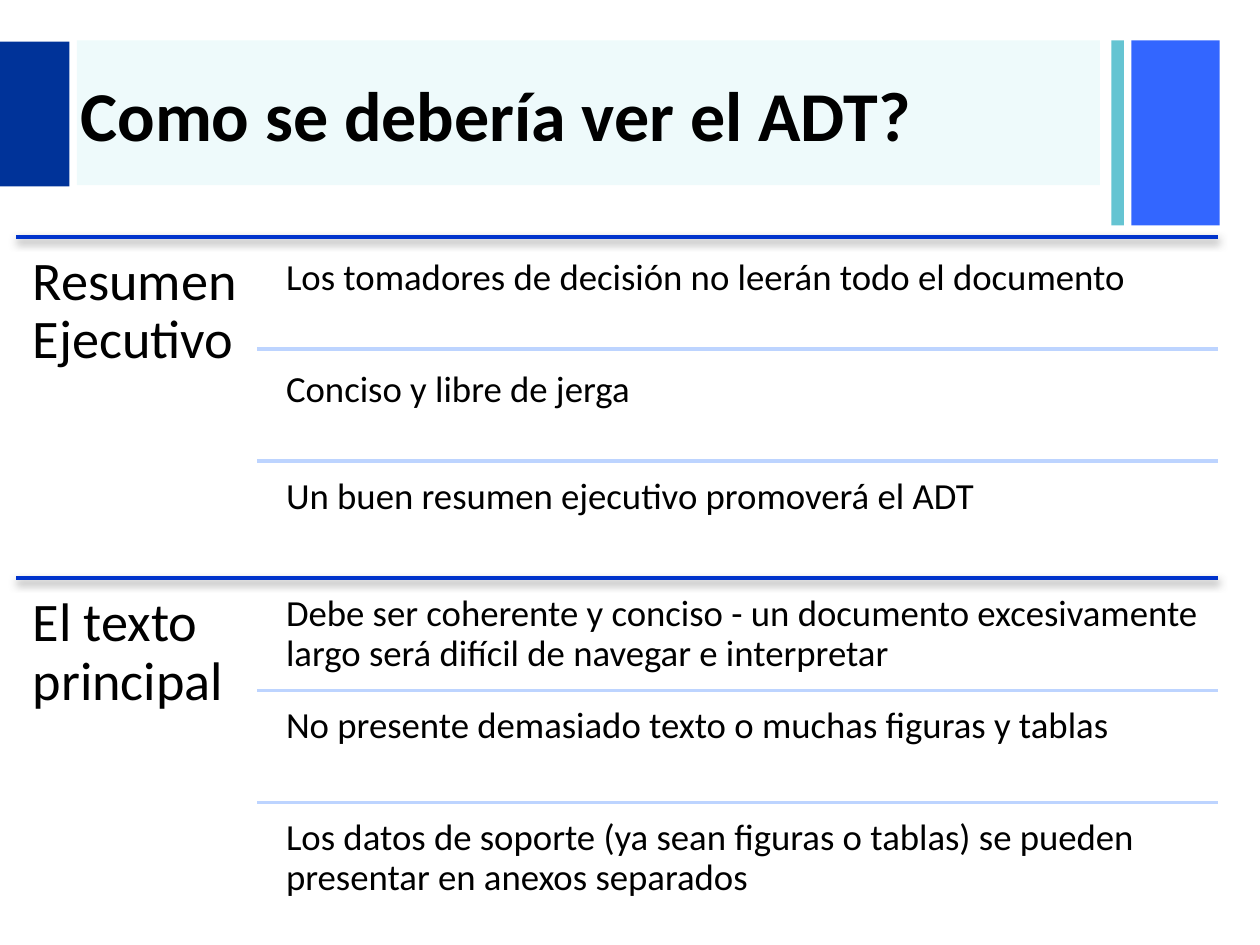
from dataclasses import dataclass

from lxml import etree
from pptx import Presentation
from pptx.dml.color import RGBColor
from pptx.enum.shapes import MSO_CONNECTOR, MSO_SHAPE
from pptx.enum.text import MSO_ANCHOR
from pptx.oxml.ns import qn
from pptx.util import Inches, Pt

RECT = MSO_SHAPE.RECTANGLE
LINE = MSO_CONNECTOR.STRAIGHT
TOP, MIDDLE = MSO_ANCHOR.TOP, MSO_ANCHOR.MIDDLE
COLS, ROWS = 100, 75


@dataclass(frozen=True)
class Theme:
    font: str = "Calibri"
    ink: str = "000000"
    navy: str = "003399"
    blue: str = "3366FF"
    teal: str = "65C4D2"
    band: str = "14C5D0"
    rule: str = "0033CC"
    pale: str = "BDD4FF"
    shade: str = "808080"
    title: int = 40
    head: int = 31
    body: int = 21


class Page:
    """Draws on one slide; lengths are grid columns and rows."""

    def __init__(self, deck, theme):
        self.theme = theme
        self.slide = deck.slides.add_slide(deck.slide_layouts[6])
        self.col = deck.slide_width / COLS
        self.row = deck.slide_height / ROWS

    def place(self, x, y, w, h):
        return (round(x * self.col), round(y * self.row),
                round(w * self.col), round(h * self.row))

    def block(self, box, color, alpha=100):
        shape = self.slide.shapes.add_shape(RECT, *self.place(*box))
        shape.shadow.inherit = False
        shape.fill.solid()
        shape.fill.fore_color.rgb = RGBColor.from_string(color)
        shape.line.fill.background()
        if alpha < 100:
            tint = shape.fill._xPr.find(".//" + qn("a:srgbClr"))
            etree.SubElement(tint, qn("a:alpha"), val=str(alpha * 1000))

    def rule(self, x, y, end, color, width, shade=False):
        left, top, right, _ = self.place(x, y, end, 0)
        line = self.slide.shapes.add_connector(LINE, left, top, right, top)
        line.line.color.rgb = RGBColor.from_string(color)
        line.line.width = Pt(width)
        effect = etree.SubElement(line._element.spPr, qn("a:effectLst"))
        if shade:
            drop = etree.SubElement(effect, qn("a:outerShdw"), blurRad=str(Pt(5)),
                                    dist=str(Pt(2)), dir="5400000", rotWithShape="0")
            tint = etree.SubElement(drop, qn("a:srgbClr"), val=self.theme.shade)
            etree.SubElement(tint, qn("a:alpha"), val="75000")

    def text(self, box, words, size, pad=(0.1, 0.05), space=1.0, bold=False, anchor=TOP):
        frame = self.slide.shapes.add_textbox(*self.place(*box)).text_frame
        side, edge = map(Inches, pad)
        look = {"word_wrap": True, "vertical_anchor": anchor,
                "margin_left": side, "margin_right": side,
                "margin_top": edge, "margin_bottom": edge}
        for name, value in look.items():
            setattr(frame, name, value)
        para = frame.paragraphs[0]
        para.line_spacing = space
        run = para.add_run()
        run.text = words
        for name, value in {"name": self.theme.font, "size": Pt(size), "bold": bold}.items():
            setattr(run.font, name, value)
        run.font.color.rgb = RGBColor.from_string(self.theme.ink)

    def section(self, top, head, points):
        """A ruled heading on the left, with ruled points on the right."""
        left, inner, right, step, gap = 1.3, 20.4, 96.7, 8.9, 0.4
        self.rule(left, top, right, self.theme.rule, 2.25, shade=True)
        self.text((left, top, inner - left, 27.2), head, self.theme.head, (0.13, 0.13), 0.9)
        for i, (words, space) in enumerate(points):
            y = top + i * step
            if i:
                self.rule(inner, y, right, self.theme.pale, 2)
            self.text((21.8, y + gap, 74.9, step - gap), words,
                      self.theme.body, (0.09, 0.09), space)


SECTIONS = [
    ("Resumen Ejecutivo", [
        ("Los tomadores de decisión no leerán todo el documento", 1.0),
        ("Conciso y libre de jerga", 1.0),
        ("Un buen resumen ejecutivo promoverá el ADT", 0.9),
    ]),
    ("El texto principal", [
        ("Debe ser coherente y conciso - un documento excesivamente largo "
         "será difícil de navegar e interpretar", 0.9),
        ("No presente demasiado texto o muchas figuras y tablas", 0.9),
        ("Los datos de soporte (ya sean figuras o tablas) se pueden "
         "presentar en anexos separados", 0.9),
    ]),
]


def main():
    deck = Presentation()
    deck.slide_width, deck.slide_height = Inches(10), Inches(7.5)
    theme = Theme()
    page = Page(deck, theme)
    page.block((89.8, 3.2, 7, 14.7), theme.blue)
    page.block((88.2, 3.2, 1, 14.7), theme.teal)
    page.block((6.1, 3.2, 81.2, 11.5), theme.band, alpha=7)
    page.block((0, 3.3, 5.5, 11.5), theme.navy)
    page.text((5.4, 3.4, 82.7, 11.2), "Como se debería ver el ADT?",
              theme.title, bold=True, anchor=MIDDLE)
    for i, (head, points) in enumerate(SECTIONS):
        page.section(18.8 + i * 27.1, head, points)
    deck.save("out.pptx")


if __name__ == "__main__":
    main()
